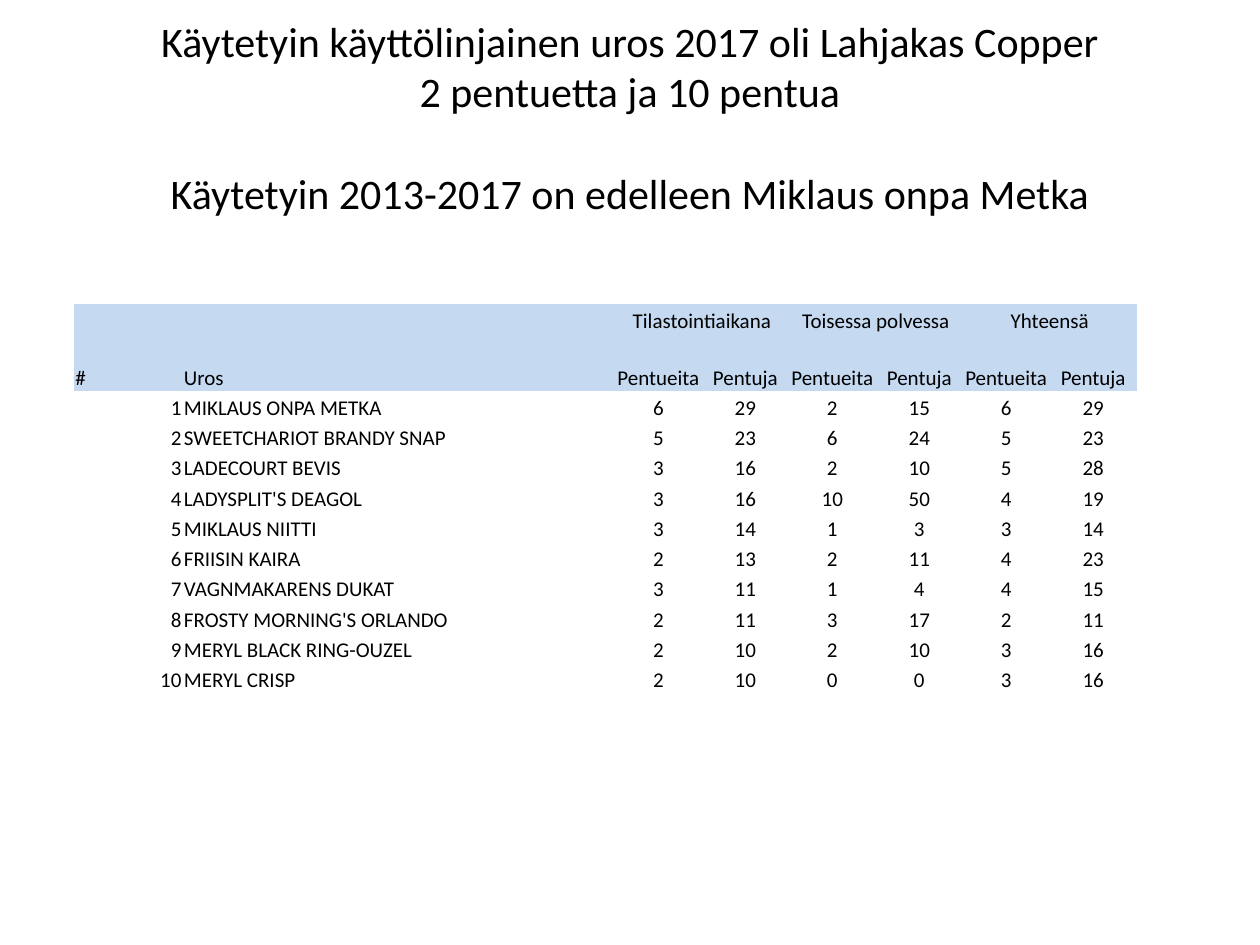
from pptx import Presentation
from pptx.dml.color import RGBColor
from pptx.enum import text
from pptx.oxml import ns
from pptx.util import Pt


def format_runs(paragraph, size, color):
    for run in paragraph.runs:
        run.font.name = "Calibri"
        run.font.size = Pt(size)
        run.font.color.rgb = RGBColor.from_string(color)


presentation = Presentation()
presentation.slide_width, presentation.slide_height = Pt(720), Pt(540)
slide = presentation.slides.add_slide(presentation.slide_layouts[5])

title = slide.shapes.title
title.left, title.top, title.width, title.height = Pt(36), Pt(21.6), Pt(648), Pt(90)
title.text_frame.text = (
    "Käytetyin käyttölinjainen uros 2017 oli Lahjakas Copper\v2 pentuetta ja 10 pentua\n"
    "Käytetyin 2013-2017 on edelleen Miklaus onpa Metka"
)
title.text_frame.auto_size = text.MSO_AUTO_SIZE.NONE
title.text_frame.vertical_anchor = text.MSO_ANCHOR.MIDDLE
for paragraph, space in zip(title.text_frame.paragraphs, (0, 29)):
    paragraph.alignment = text.PP_ALIGN.CENTER
    paragraph.space_before = Pt(space)
    format_runs(paragraph, 24, "000000")

groups = ["Tilastointiaikana", "Toisessa polvessa", "Yhteensä"]
sires = [
    ("MIKLAUS ONPA METKA", 6, 29, 2, 15, 6, 29),
    ("SWEETCHARIOT BRANDY SNAP", 5, 23, 6, 24, 5, 23),
    ("LADECOURT BEVIS", 3, 16, 2, 10, 5, 28),
    ("LADYSPLIT'S DEAGOL", 3, 16, 10, 50, 4, 19),
    ("MIKLAUS NIITTI", 3, 14, 1, 3, 3, 14),
    ("FRIISIN KAIRA", 2, 13, 2, 11, 4, 23),
    ("VAGNMAKARENS DUKAT", 3, 11, 1, 4, 4, 15),
    ("FROSTY MORNING'S ORLANDO", 2, 11, 3, 17, 2, 11),
    ("MERYL BLACK RING-OUZEL", 2, 10, 2, 10, 3, 16),
    ("MERYL CRISP", 2, 10, 0, 0, 3, 16),
]
rows = [["", ""], ["#", "Uros"] + ["Pentueita", "Pentuja"] * len(groups)]
for group in groups:
    rows[0] += [group, ""]
rows += [(rank, *sire) for rank, sire in enumerate(sires, 1)]

column_widths = [62, 247] + [49.7] * 6
row_heights = [17.3, 32.4] + [17.3] * len(sires)
frame = slide.shapes.add_table(
    len(rows), len(column_widths), Pt(42.4), Pt(173.6),
    Pt(sum(column_widths)), Pt(sum(row_heights)),
)
table = frame.table
table.first_row = table.horz_banding = False
no_style_no_grid = "{2D5ABB26-0587-4C30-8999-92F81FD0307C}"
frame._element.find(".//" + ns.qn("a:tableStyleId")).text = no_style_no_grid
for column, width in zip(table.columns, column_widths):
    column.width = Pt(width)
for row, height in zip(table.rows, row_heights):
    row.height = Pt(height)

for row_index, values in enumerate(rows):
    for column_index, value in enumerate(values):
        cell = table.cell(row_index, column_index)
        cell.margin_left = cell.margin_right = cell.margin_top = Pt(0.72)
        cell.margin_bottom = 0
        cell.vertical_anchor = text.MSO_ANCHOR.BOTTOM
        if row_index < 2:
            cell.fill.solid()
            cell.fill.fore_color.rgb = RGBColor.from_string("C5D9F1")
        else:
            cell.fill.background()
        cell.text_frame.text = str(value)
        paragraph = cell.text_frame.paragraphs[0]
        if column_index > 1:
            paragraph.alignment = text.PP_ALIGN.CENTER
        elif column_index == 0 and row_index > 1:
            paragraph.alignment = text.PP_ALIGN.RIGHT
        else:
            paragraph.alignment = text.PP_ALIGN.LEFT
        format_runs(paragraph, 12, "000000")
        if value == "":
            paragraph._p.get_or_add_endParaRPr().set("sz", "1200")

for column_index in range(2, len(column_widths), 2):
    table.cell(0, column_index).merge(table.cell(0, column_index + 1))

presentation.save("out.pptx")
